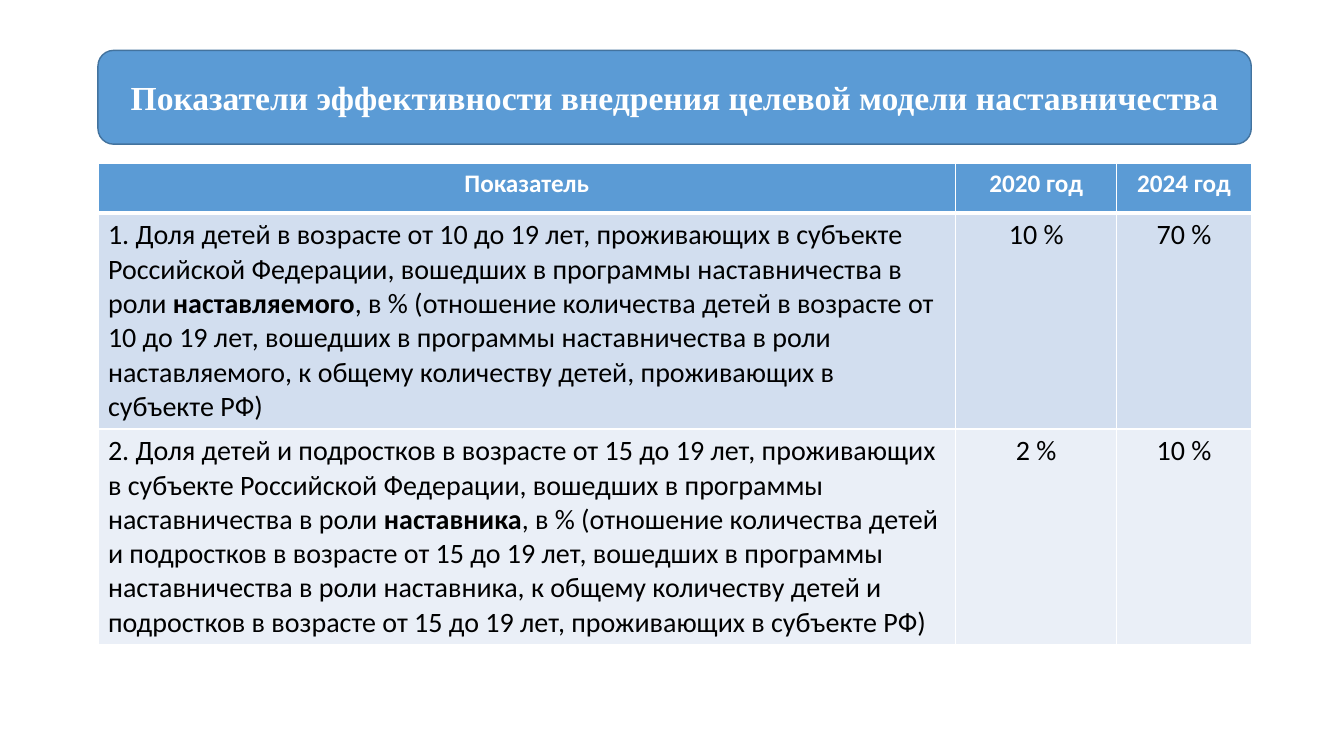
from lxml.etree import SubElement
from pptx import Presentation
from pptx.dml.color import RGBColor
from pptx.enum.shapes import MSO_SHAPE as Shape
from pptx.enum.text import MSO_ANCHOR as Anchor, MSO_AUTO_SIZE as AutoSize, PP_ALIGN as Align
from pptx.oxml.ns import qn
from pptx.util import Pt

BLUE, DARK_BLUE, WHITE, BLACK = "5B9BD5", "43739E", "FFFFFF", "000000"
BANDS = ["D2DEEF", "EAEFF7"]
COLUMN_WIDTHS = [612.6, 115.2, 96]
HEADER_HEIGHT, ROW_HEIGHT = 35.5, 153.7

TITLE = "Показатели эффективности внедрения целевой модели наставничества"
HEADINGS = ["Показатель", "2020 год", "2024 год"]
# Each indicator: text before the role, the role in bold, text after it, then two yearly values
INDICATORS = [
    (
        "1. Доля детей в возрасте от 10 до 19 лет, проживающих в субъекте Российской "
        "Федерации, вошедших в программы наставничества в роли ",
        "наставляемого",
        ", в % (отношение количества детей в возрасте от 10 до 19 лет, вошедших в программы "
        "наставничества в роли наставляемого, к общему количеству детей, проживающих в субъекте РФ)",
        "10 %", "70 %",
    ),
    (
        "2. Доля детей и подростков в возрасте от 15 до 19 лет, проживающих в субъекте "
        "Российской Федерации, вошедших в программы наставничества в роли ",
        "наставника",
        ", в % (отношение количества детей и подростков в возрасте от 15 до 19 лет, вошедших в "
        "программы наставничества в роли наставника, к общему количеству детей и подростков в "
        "возрасте от 15 до 19 лет, проживающих в субъекте РФ)",
        "2 %", "10 %",
    ),
]


def color(hex_code):
    return RGBColor.from_string(hex_code)


def add_span(para, text, size, hex_code, bold=False, font="Calibri"):
    span = para.add_run()
    span.text = text
    span.font.name, span.font.size, span.font.bold = font, Pt(size), bold
    span.font.color.rgb = color(hex_code)


def add_title(page, left, top, width, height):
    """Lay the title placeholder over a rounded bar of the same size."""
    box = [Pt(length) for length in (left, top, width, height)]
    bar = page.shapes.add_shape(Shape.ROUNDED_RECTANGLE, *box)
    bar.shadow.inherit = False
    bar.fill.solid()
    bar.fill.fore_color.rgb = color(BLUE)
    bar.line.color.rgb = color(DARK_BLUE)
    bar.line.width = Pt(1)

    title = page.shapes.title
    title.left, title.top, title.width, title.height = box
    bar.element.addnext(title.element)
    frame = title.text_frame
    frame.word_wrap, frame.auto_size = True, AutoSize.NONE
    frame.vertical_anchor = Anchor.MIDDLE
    para = frame.paragraphs[0]
    para.alignment = Align.CENTER
    add_span(para, TITLE, 24, WHITE, True, "Times New Roman")


def set_borders(cell, top, bottom):
    """Draw white cell borders: 1 pt at the sides, the given widths above and below."""
    properties = cell._tc.get_or_add_tcPr()
    sides = {"a:lnL": 1, "a:lnR": 1, "a:lnT": top, "a:lnB": bottom}
    for index, (tag, width) in enumerate(sides.items()):
        line = SubElement(properties, qn(tag), w=str(Pt(width)))
        fill = SubElement(line, qn("a:solidFill"))
        SubElement(fill, qn("a:srgbClr"), val=WHITE)
        properties.insert(index, line)


def fill_cell(cell, spans, background, size, text_color, align, borders):
    cell.fill.solid()
    cell.fill.fore_color.rgb = color(background)
    set_borders(cell, *borders)
    para = cell.text_frame.paragraphs[0]
    para.alignment = align
    for text, bold in spans:
        add_span(para, text, size, text_color, bold)


def add_indicator_table(page, left, top):
    heights = [HEADER_HEIGHT] + [ROW_HEIGHT] * len(INDICATORS)
    table = page.shapes.add_table(
        len(heights), len(COLUMN_WIDTHS),
        Pt(left), Pt(top), Pt(sum(COLUMN_WIDTHS)), Pt(sum(heights)),
    ).table
    for column, width in zip(table.columns, COLUMN_WIDTHS):
        column.width = Pt(width)
    for row, height in zip(table.rows, heights):
        row.height = Pt(height)

    for cell, heading in zip(table.rows[0].cells, HEADINGS):
        fill_cell(cell, [(heading, True)], BLUE, 18, WHITE, Align.CENTER, (1, 3))
    for index, (before, role, after, *values) in enumerate(INDICATORS):
        first, *others = table.rows[index + 1].cells
        band = BANDS[index % len(BANDS)]
        borders = (1 if index else 3, 1)
        description = [(before, False), (role, True), (after, False)]
        fill_cell(first, description, band, 20, BLACK, Align.LEFT, borders)
        for cell, value in zip(others, values):
            fill_cell(cell, [(value, False)], band, 20, BLACK, Align.CENTER, borders)


def main():
    deck = Presentation()
    deck.slide_width, deck.slide_height = Pt(960), Pt(540)
    page = deck.slides.add_slide(deck.slide_layouts.get_by_name("Title Only"))
    add_title(page, 70, 36, sum(COLUMN_WIDTHS), 67)
    add_indicator_table(page, 70, 116.8)
    deck.save("out.pptx")


if __name__ == "__main__":
    main()
